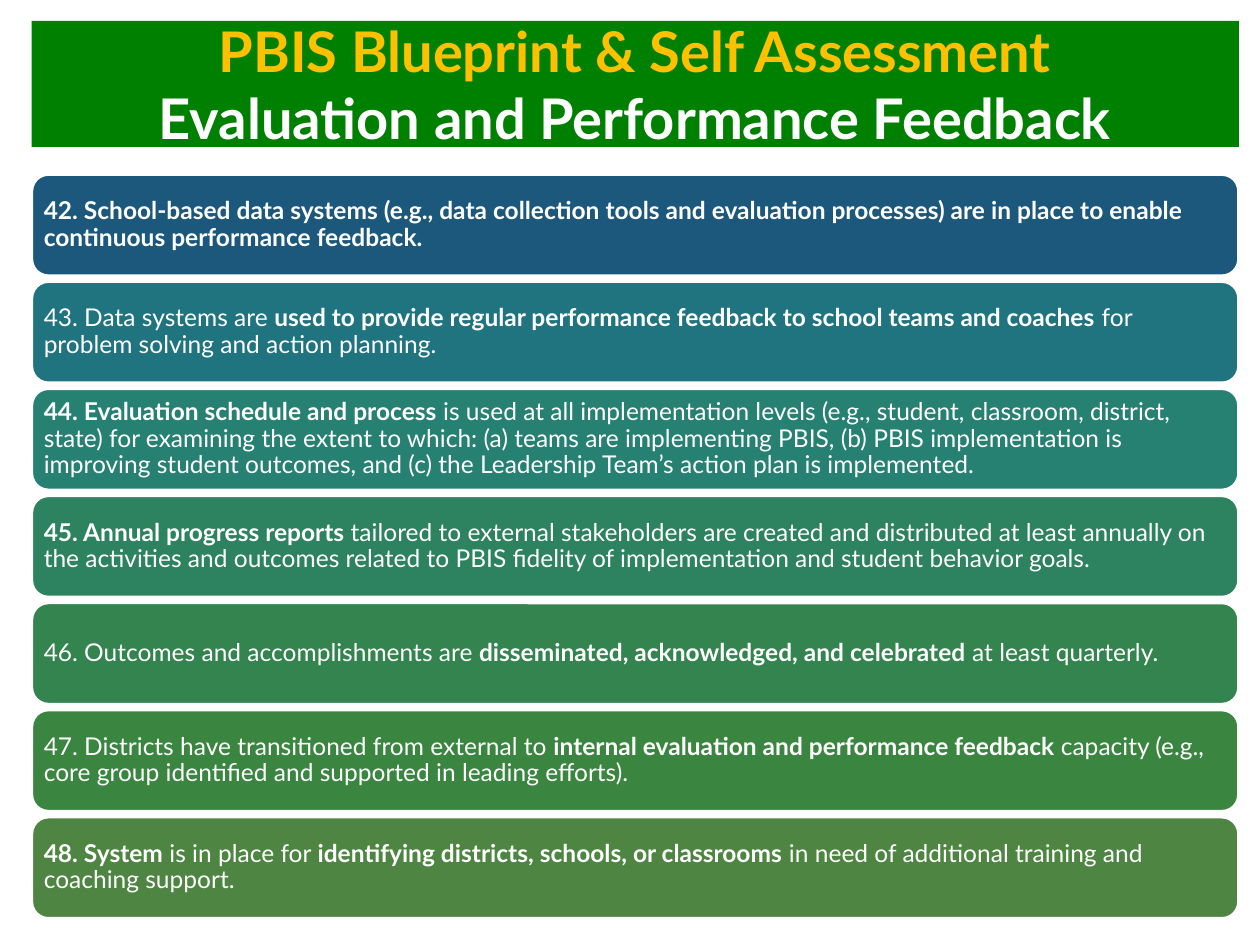
from pptx import Presentation
from pptx.dml.color import RGBColor
from pptx.enum.shapes import MSO_SHAPE
from pptx.enum.text import MSO_ANCHOR, MSO_AUTO_SIZE, PP_ALIGN
from pptx.util import Pt

HEX = {"band": "008000", "gold": "FFC000", "white": "FFFFFF"}
FILLS = ["1B587C", "20747F", "268173", "2D8260", "33844E", "3A8540", "4E8542"]

# Bold parts stand between double asterisks
ITEMS = [
    "**42. School-based data systems (e.g., data collection tools and evaluation "
    "processes) are in place to enable continuous performance feedback.**",
    "43. Data systems are **used to provide regular performance feedback to school "
    "teams and coaches** for problem solving and action planning.",
    "**44. Evaluation schedule and process** is used at all implementation levels "
    "(e.g., student, classroom, district, state) for examining the extent to which: "
    "(a) teams are implementing PBIS, (b) PBIS implementation is improving student "
    "outcomes, and (c) the Leadership Team’s action plan is implemented.",
    "**45. Annual progress reports **tailored to external stakeholders are created "
    "and distributed at least annually on the activities and outcomes related to "
    "PBIS fidelity of implementation and student behavior goals.",
    "46. Outcomes and accomplishments are** disseminated, acknowledged, and "
    "celebrated** at least quarterly.",
    "47. Districts have transitioned from external to** internal evaluation and "
    "performance feedback **capacity (e.g., core group identified and supported in "
    "leading efforts).",
    "**48. System** is in place for **identifying districts, schools, or "
    "classrooms** in need of additional training and coaching support.",
]


def color(code):
    return RGBColor.from_string(code)


def write(para, text, size=14, hue="white", align=PP_ALIGN.LEFT, lead=None):
    para.alignment = align
    if lead:
        para.line_spacing = lead
    for i, part in enumerate(text.split("**")):
        if part:
            run = para.add_run()
            run.text = part
            font = run.font
            font.name, font.size, font.bold = "Lato", Pt(size), i % 2 == 1
            font.color.rgb = color(HEX[hue])


def set_frame(frame, inset):
    frame.word_wrap = True
    frame.auto_size = MSO_AUTO_SIZE.NONE
    frame.vertical_anchor = MSO_ANCHOR.MIDDLE
    frame.margin_left = frame.margin_right = Pt(inset)
    frame.margin_top = frame.margin_bottom = Pt(inset)


def add_title(slide, x, y, w, h):
    title = slide.shapes.title
    title.left, title.top, title.width, title.height = Pt(x), Pt(y), Pt(w), Pt(h)
    title.fill.solid()
    title.fill.fore_color.rgb = color(HEX["band"])
    frame = title.text_frame
    set_frame(frame, 3.6)
    write(frame.paragraphs[0], "**PBIS Blueprint & Self Assessment**",
          size=32, hue="gold", align=PP_ALIGN.CENTER)
    write(frame.add_paragraph(), "**Evaluation and Performance Feedback**",
          size=32, align=PP_ALIGN.CENTER)


def add_list(slide, x, y, w, h, gap=2.88):
    tall = (h - gap * (len(ITEMS) - 1)) / len(ITEMS)
    for i, (text, fill) in enumerate(zip(ITEMS, FILLS)):
        card = slide.shapes.add_shape(
            MSO_SHAPE.ROUNDED_RECTANGLE,
            Pt(x), Pt(y + i * (tall + gap)), Pt(w), Pt(tall))
        card.shadow.inherit = False
        card.fill.solid()
        card.fill.fore_color.rgb = color(fill)
        card.line.color.rgb = color(HEX["white"])
        card.line.width = Pt(2)
        set_frame(card.text_frame, 4.2)
        write(card.text_frame.paragraphs[0], text, lead=0.9)


def main():
    deck = Presentation()
    deck.slide_width, deck.slide_height = Pt(720), Pt(540)
    slide = deck.slides.add_slide(deck.slide_layouts[5])
    add_title(slide, 18, 12, 690, 72)
    add_list(slide, 18, 99.5, 690, 425.5)
    deck.save("out.pptx")


if __name__ == "__main__":
    main()
